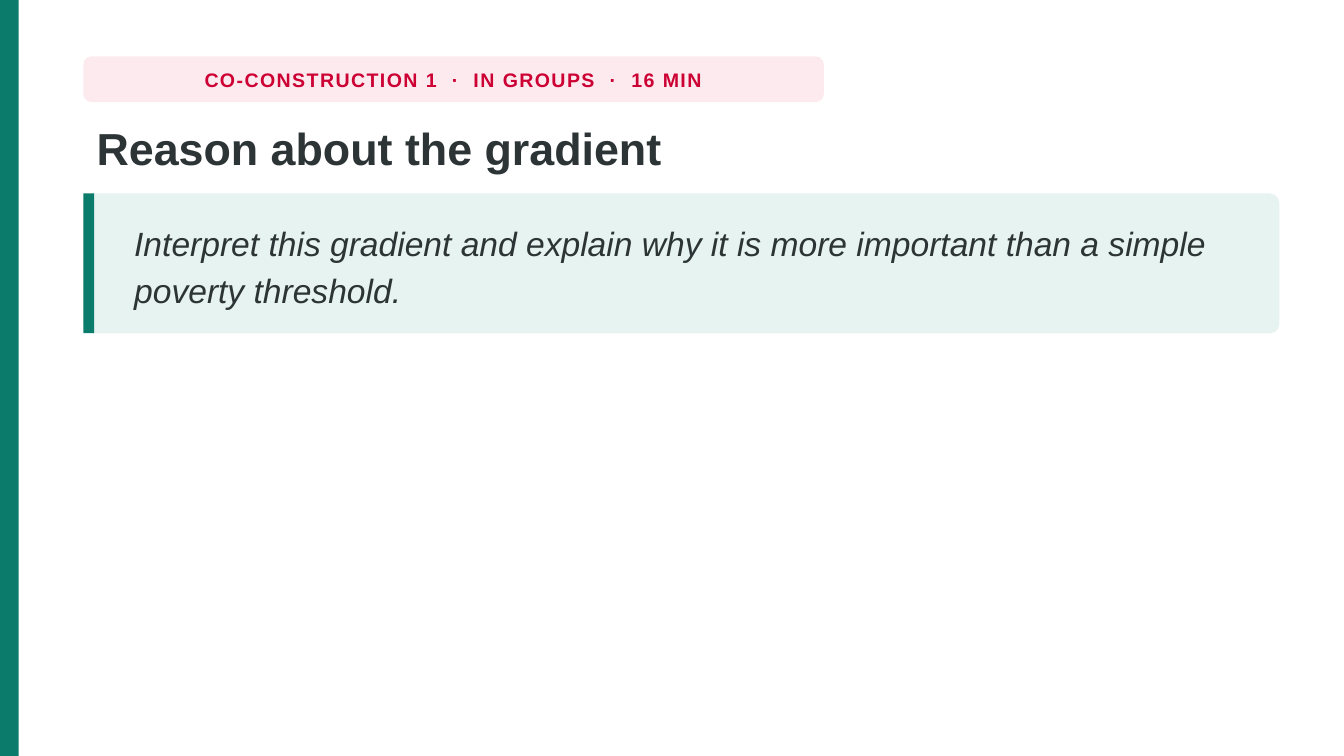
from dataclasses import dataclass

import pptx
import pptx.dml.color
import pptx.enum.shapes
import pptx.enum.text
import pptx.util

Inches = pptx.util.Inches
Shapes = pptx.enum.shapes.MSO_SHAPE
Anchor = pptx.enum.text.MSO_ANCHOR
Align = pptx.enum.text.PP_ALIGN


@dataclass(frozen=True)
class Theme:
    font: str = "Arial"
    background: str = "FFFFFF"
    ink: str = "2D3436"
    accent: str = "0B7B6B"
    accent_tint: str = "E6F3F0"
    badge: str = "CC0033"
    badge_tint: str = "FDEAEF"
    badge_size: float = 10.5
    title_size: float = 24
    prompt_size: float = 18
    badge_radius: float = 0.06
    prompt_radius: float = 0.07


THEME = Theme()
SLIDE_WIDTH = 10
SLIDE_HEIGHT = SLIDE_WIDTH * 9 / 16
MARGIN_LEFT, CONTENT_WIDTH = 0.62, 8.9


def rgb(color):
    return pptx.dml.color.RGBColor.from_string(color)


def add_panel(slide, box, color, radius=0):
    kind = Shapes.ROUNDED_RECTANGLE if radius else Shapes.RECTANGLE
    shape = slide.shapes.add_shape(kind, *map(Inches, box))
    if radius:
        shape.adjustments[0] = radius / min(box[2:])
    shape.shadow.inherit = False
    shape.fill.solid()
    shape.fill.fore_color.rgb = rgb(color)
    shape.line.fill.background()


def add_text(slide, box, text, *, size, color=THEME.ink, bold=False, italic=False,
             align=Align.LEFT, anchor=Anchor.TOP, line_spacing=1.0, tracking=0, wrap=True):
    frame = slide.shapes.add_textbox(*map(Inches, box)).text_frame
    frame.word_wrap = wrap
    frame.vertical_anchor = anchor
    paragraph = frame.paragraphs[0]
    paragraph.alignment = align
    paragraph.line_spacing = line_spacing
    run = paragraph.add_run()
    run.text = text
    run.font.name = THEME.font
    run.font.size = pptx.util.Pt(size)
    run.font.color.rgb = rgb(color)
    run.font.bold = bold
    run.font.italic = italic
    if tracking:
        run.font._element.set("spc", str(round(tracking * 100)))


def add_badge(slide, box, text):
    add_panel(slide, box, THEME.badge_tint, radius=THEME.badge_radius)
    add_text(slide, box, text, size=THEME.badge_size, color=THEME.badge, bold=True,
             align=Align.CENTER, anchor=Anchor.MIDDLE, tracking=0.8, wrap=False)


def add_title(slide, box, text):
    add_text(slide, box, text, size=THEME.title_size, bold=True, line_spacing=1.02)


def add_prompt(slide, box, text):
    left, top, width, height = box
    add_panel(slide, box, THEME.accent_tint, radius=THEME.prompt_radius)
    add_panel(slide, (left, top, 0.08, height), THEME.accent)
    add_text(slide, (left + 0.28, top + 0.05, width - 0.55, height - 0.1), text,
             size=THEME.prompt_size, italic=True, anchor=Anchor.MIDDLE, line_spacing=1.16)


def build_activity_slide(presentation):
    slide = presentation.slides.add_slide(presentation.slide_layouts[6])
    slide.background.fill.solid()
    slide.background.fill.fore_color.rgb = rgb(THEME.background)
    add_panel(slide, (0, 0, 0.14, SLIDE_HEIGHT), THEME.accent)
    add_badge(slide, (MARGIN_LEFT, 0.42, 5.51, 0.34),
              "CO-CONSTRUCTION 1  ·  IN GROUPS  ·  16 MIN")
    add_title(slide, (MARGIN_LEFT, 0.84, CONTENT_WIDTH, 0.56), "Reason about the gradient")
    add_prompt(slide, (MARGIN_LEFT, 1.44, CONTENT_WIDTH, 1.04),
               "Interpret this gradient and explain why it is more important "
               "than a simple poverty threshold.")


def main():
    presentation = pptx.Presentation()
    presentation.slide_width = Inches(SLIDE_WIDTH)
    presentation.slide_height = Inches(SLIDE_HEIGHT)
    build_activity_slide(presentation)
    presentation.save("out.pptx")


if __name__ == "__main__":
    main()
